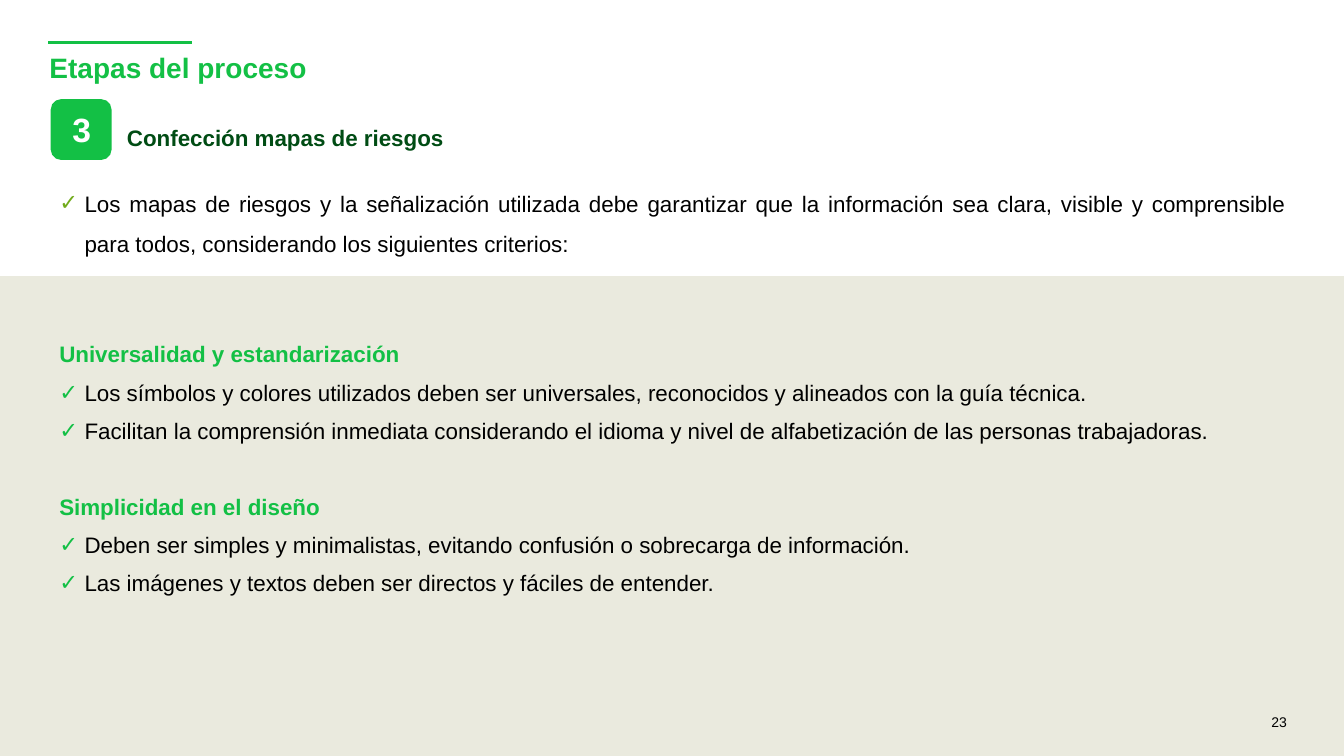
import pptx
import pptx.util
import pptx.dml.color
import pptx.enum.shapes
import pptx.enum.text
import pptx.oxml.ns
import lxml.etree

Inches = pptx.util.Inches
Pt = pptx.util.Pt
RGB = pptx.dml.color.RGBColor
Shape = pptx.enum.shapes.MSO_SHAPE
Align = pptx.enum.text.PP_ALIGN

GREEN = RGB(0x13, 0xC0, 0x45)
DARK = RGB(0x00, 0x4C, 0x14)
OLIVE = RGB(0x71, 0xAB, 0x1B)
BEIGE = RGB(0xEA, 0xEA, 0xDE)
BLACK = RGB(0, 0, 0)
WHITE = RGB(0xFF, 0xFF, 0xFF)

# Content
TITLE = "Etapas del proceso"
STEP = "3"
TOPIC = "Confección mapas de riesgos"
INTRO = ("Los mapas de riesgos y la señalización utilizada debe garantizar que la "
         "información sea clara, visible y comprensible para todos, considerando "
         "los siguientes criterios:")
RULES = [
    ("Universalidad y estandarización", [
        "Los símbolos y colores utilizados deben ser universales, reconocidos y "
        "alineados con la guía técnica.",
        "Facilitan la comprensión inmediata considerando el idioma y nivel de "
        "alfabetización de las personas trabajadoras."]),
    ("Simplicidad en el diseño", [
        "Deben ser simples y minimalistas, evitando confusión o sobrecarga de información.",
        "Las imágenes y textos deben ser directos y fáciles de entender."]),
]
PAGE = "23"

# Text formats
HEAD = dict(size=Pt(16), color=GREEN, bold=True, line_spacing=0.9)
ITEM = dict(size=Pt(16), color=BLACK, line_spacing=0.9, space_before=Pt(10), check=GREEN)
LEAD = dict(size=Pt(16), color=BLACK, line_spacing=1.5, alignment=Align.JUSTIFY, check=OLIVE)
NAME = dict(size=Pt(20), color=GREEN, bold=True, line_spacing=0.9)
MARK = dict(size=Pt(24), color=WHITE, bold=True, alignment=Align.CENTER)
FOOT = dict(size=Pt(10), color=BLACK)


def add_check(para, color):
    """Give a paragraph a hanging check mark."""
    props = para._p.get_or_add_pPr()
    props.set("marL", str(Inches(0.25)))
    props.set("indent", str(-Inches(0.25)))
    qn = pptx.oxml.ns.qn
    tint = lxml.etree.SubElement(props, qn("a:buClr"))
    lxml.etree.SubElement(tint, qn("a:srgbClr"), val=str(color))
    lxml.etree.SubElement(props, qn("a:buFont"), typeface="Arial")
    lxml.etree.SubElement(props, qn("a:buChar"), char="✓")


def add_text(slide, spot, lines, inset=0):
    box = slide.shapes.add_textbox(*map(Inches, spot))
    frame = box.text_frame
    frame.word_wrap = True
    for side in ("left", "top", "right", "bottom"):
        setattr(frame, "margin_" + side, Inches(inset / 2 if side in ("top", "bottom") else inset))
    for num, (text, form) in enumerate(lines):
        para = frame.add_paragraph() if num else frame.paragraphs[0]
        if "check" in form:
            add_check(para, form["check"])
        run = para.add_run()
        run.text = text
        run.font.name = "Arial"
        for key, value in form.items():
            if key == "color":
                run.font.color.rgb = value
            elif key in ("size", "bold"):
                setattr(run.font, key, value)
            elif key != "check":
                setattr(para, key, value)


def add_block(slide, kind, spot, color):
    block = slide.shapes.add_shape(kind, *map(Inches, spot))
    block.shadow.inherit = False
    block.fill.solid()
    block.fill.fore_color.rgb = color
    block.line.fill.background()
    return block


def main():
    deck = pptx.Presentation()
    deck.slide_width, deck.slide_height = Inches(13.33), Inches(7.5)
    slide = deck.slides.add_slide(deck.slide_layouts[6])

    # Accent line and lower panel
    rule = slide.shapes.add_connector(
        pptx.enum.shapes.MSO_CONNECTOR.STRAIGHT,
        Inches(0.48), Inches(0.42), Inches(1.9), Inches(0.42))
    rule.line.color.rgb = GREEN
    rule.line.width = Pt(1.75)
    lxml.etree.SubElement(rule._element.spPr, pptx.oxml.ns.qn("a:effectLst"))
    add_block(slide, Shape.RECTANGLE, (0, 2.74, 13.33, 4.76), BEIGE)

    # Title, topic and page number
    add_text(slide, (1.26, 1.26, 9.94, 0.39), [(TOPIC, HEAD | dict(color=DARK))])
    add_text(slide, (0.49, 0.54, 10.71, 0.67), [(TITLE, NAME)])
    add_text(slide, (12.61, 7.08, 0.55, 0.26), [(PAGE, FOOT)])

    # Introduction
    add_text(slide, (0.49, 1.7, 12.36, 1.04), [(INTRO, LEAD)], 0.1)

    # Step badge
    badge = add_block(slide, Shape.FLOWCHART_ALTERNATE_PROCESS, (0.51, 0.99, 0.59, 0.59), GREEN)
    badge.line.color.rgb = GREEN
    badge.line.width = Pt(1)
    add_text(slide, (0.51, 1.08, 0.6, 0.5), [(STEP, MARK)])

    # Criteria: each later group stands one line further down
    lines = []
    for head, items in RULES:
        gap = dict(space_before=Pt(37)) if lines else {}
        lines.append((head, HEAD | gap))
        lines += [(item, ITEM) for item in items]
    add_text(slide, (0.49, 3.36, 12.84, 3.75), lines, 0.1)

    deck.save("out.pptx")


if __name__ == "__main__":
    main()
